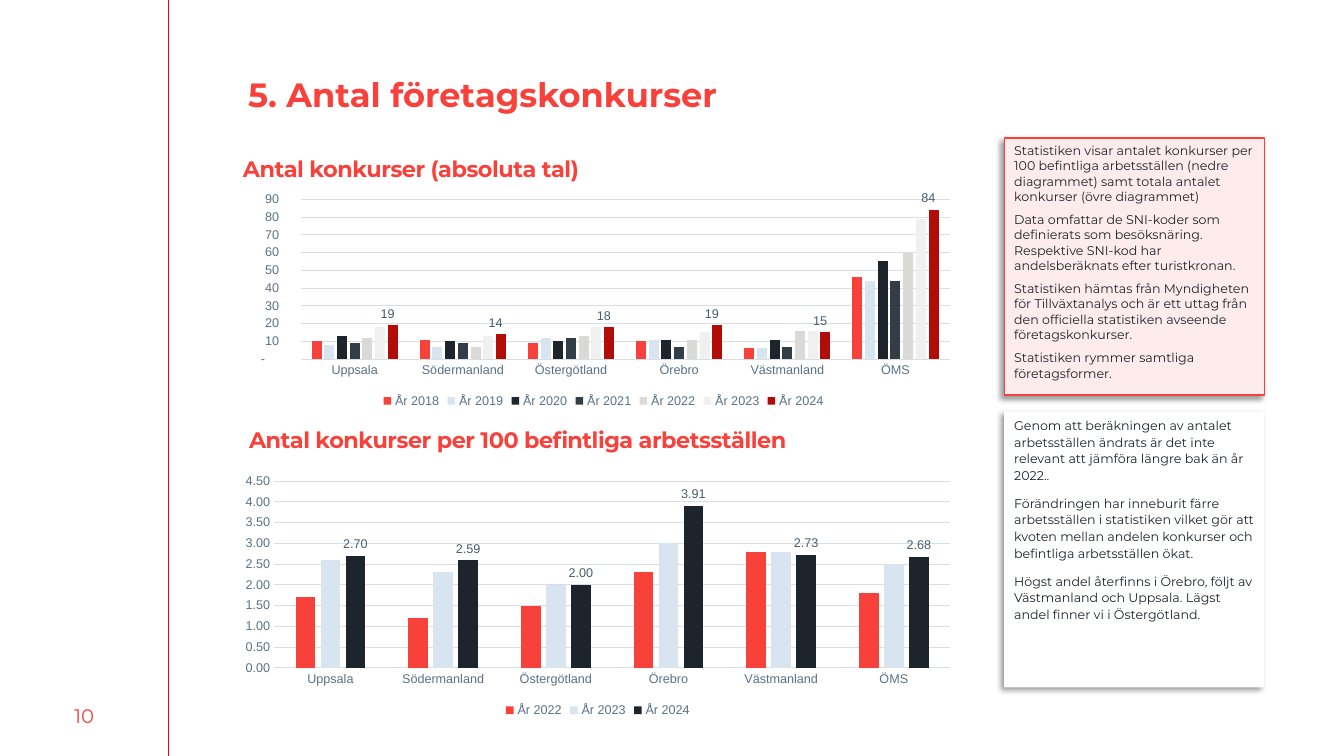
import pptx
import pptx.chart.data
import pptx.dml.color
import pptx.enum.chart
import pptx.enum.shapes
import pptx.enum.text
import pptx.oxml
import pptx.oxml.ns
import pptx.util

COLORS = {
    "red": "F8413A", "accent": "F7413A", "rule": "FF0000", "pink": "FEECEC",
    "white": "FFFFFF", "ink": "1D242B", "axis": "5B7187", "label": "495B6C",
    "grid": "D8DEE5", "pale_blue": "D8E5F0", "slate": "333D46",
    "stone": "D9D9D6", "mist": "F0F0F0", "dark_red": "B10D06",
}
REGIONS = ["Uppsala", "Södermanland", "Östergötland", "Örebro", "Västmanland", "ÖMS"]
COUNT_FORMAT = r'_-* #\ ##0\ _k_r_-;\-* #\ ##0\ _k_r_-;_-* "-"??\ _k_r_-;_-@_-'
COUNT_SERIES = [
    ("År 2018", "red", [10, 11, 9, 10, 6, 46]),
    ("År 2019", "pale_blue", [8, 7, 12, 11, 6, 44]),
    ("År 2020", "ink", [13, 10, 10, 11, 11, 55]),
    ("År 2021", "slate", [9, 9, 12, 7, 7, 44]),
    ("År 2022", "stone", [12, 7, 13, 11, 16, 60]),
    ("År 2023", "mist", [18, 13, 18, 15, 16, 79]),
    ("År 2024", "dark_red", [19, 14, 18, 19, 15, 84]),
]
RATE_SERIES = [
    ("År 2022", "red", [1.7, 1.2, 1.5, 2.3, 2.8, 1.8]),
    ("År 2023", "pale_blue", [2.6, 2.3, 2, 3, 2.8, 2.5]),
    ("År 2024", "ink", [2.7, 2.59, 2, 3.91, 2.73, 2.68]),
]
METHOD_NOTES = [
    "Statistiken visar antalet konkurser per 100 befintliga arbetsställen (nedre diagrammet) samt totala antalet konkurser (övre diagrammet)",
    "Data omfattar de SNI-koder som definierats som besöksnäring. Respektive SNI-kod har andelsberäknats efter turistkronan.",
    "Statistiken hämtas från Myndigheten för Tillväxtanalys och är ett uttag från den officiella statistiken avseende företagskonkurser.",
    "Statistiken rymmer samtliga företagsformer.",
]
RESULT_NOTES = [
    "Genom att beräkningen av antalet arbetsställen ändrats är det inte relevant att jämföra längre bak än år 2022..",
    "Förändringen har inneburit färre arbetsställen i statistiken vilket gör att kvoten mellan andelen konkurser och befintliga arbetsställen ökat.",
    "Högst andel återfinns i Örebro, följt av Västmanland och Uppsala. Lägst andel finner vi i Östergötland.",
]


def rgb(name):
    return pptx.dml.color.RGBColor.from_string(COLORS[name])


def part(box, left, top, width, height):
    x, y, w, h = box
    return (int(x + w * left / 100), int(y + h * top / 100),
            int(w * width / 100), int(h * height / 100))


def style_font(font, size, color, bold=False, name="Montserrat"):
    font.name = name
    font.size = pptx.util.Pt(size)
    font.bold = bold
    font.color.rgb = rgb(color)


def set_effects(shape, content=""):
    namespace = pptx.oxml.ns.nsdecls("a")
    shape._element.spPr.append(
        pptx.oxml.parse_xml(f"<a:effectLst {namespace}>{content}</a:effectLst>"))


def add_text(slide, box, text, size, color, bold=False, inset=0.0, spacing=0):
    shape = slide.shapes.add_textbox(*box)
    frame = shape.text_frame
    frame.word_wrap = True
    frame.margin_left = frame.margin_right = pptx.util.Inches(inset)
    frame.margin_top = frame.margin_bottom = pptx.util.Inches(0.05)
    frame.text = text
    run = frame.paragraphs[0].runs[0]
    style_font(run.font, size, color, bold)
    if spacing:
        run._r.get_or_add_rPr().set("spc", str(spacing))
    return frame


def add_rail(slide, box, number):
    left, top, width, height = box
    frame = add_text(slide, part(box, 0, 92, 100, 5.33), number, 14, "accent")
    frame.vertical_anchor = pptx.enum.text.MSO_ANCHOR.MIDDLE
    frame.paragraphs[0].alignment = pptx.enum.text.PP_ALIGN.CENTER
    rule = slide.shapes.add_connector(
        pptx.enum.shapes.MSO_CONNECTOR.STRAIGHT,
        left + width, top, left + width, top + height)
    rule.line.color.rgb = rgb("rule")
    rule.line.width = pptx.util.Pt(0.75)
    set_effects(rule)


def add_panel(slide, box, notes, fill, outline, line_spacing, gap):
    panel = slide.shapes.add_shape(pptx.enum.shapes.MSO_SHAPE.RECTANGLE, *box)
    panel.fill.solid()
    panel.fill.fore_color.rgb = rgb(fill)
    if outline:
        panel.line.color.rgb = rgb(outline)
        panel.line.width = pptx.util.Pt(1)
    else:
        panel.line.fill.background()
    set_effects(panel, '<a:outerShdw blurRad="50800" dist="38100" dir="8100000" '
                'algn="tr" rotWithShape="0"><a:srgbClr val="000000">'
                '<a:alpha val="40000"/></a:srgbClr></a:outerShdw>')
    frame = panel.text_frame
    frame.word_wrap = True
    frame.vertical_anchor = pptx.enum.text.MSO_ANCHOR.TOP
    frame.text = "\n".join(notes)
    for index, paragraph in enumerate(frame.paragraphs):
        paragraph.alignment = pptx.enum.text.PP_ALIGN.LEFT
        paragraph.line_spacing = line_spacing
        paragraph.space_before = pptx.util.Pt(gap if index else 0)
        paragraph.space_after = pptx.util.Pt(gap)
        style_font(paragraph.runs[0].font, 9, "ink")


def style_axes(chart, maximum, step, number_format):
    category_axis, value_axis = chart.category_axis, chart.value_axis
    for axis in (category_axis, value_axis):
        axis.major_tick_mark = pptx.enum.chart.XL_TICK_MARK.NONE
        axis.minor_tick_mark = pptx.enum.chart.XL_TICK_MARK.NONE
        style_font(axis.tick_labels.font, 9, "axis", name="Arial")
    value_axis.has_major_gridlines = True
    for line in (category_axis.format.line, value_axis.major_gridlines.format.line):
        line.color.rgb = rgb("grid")
        line.width = pptx.util.Pt(0.75)
    value_axis.format.line.fill.background()
    value_axis.minimum_scale = 0
    value_axis.maximum_scale = maximum
    value_axis.major_unit = step
    value_axis.tick_labels.number_format = number_format
    value_axis.tick_labels.number_format_is_linked = False


def add_chart_block(slide, box, heading, indent, offset, rows, maximum, step, number_format):
    add_text(slide, part(box, indent, 0, 100 - indent, 13), heading,
             16, "accent", bold=True, spacing=-30)
    data = pptx.chart.data.CategoryChartData(number_format=number_format)
    data.categories = REGIONS
    for name, color, values in rows:
        data.add_series(name, values)
    chart = slide.shapes.add_chart(
        pptx.enum.chart.XL_CHART_TYPE.COLUMN_CLUSTERED,
        *part(box, 0, offset, 100, 100 - offset), data).chart
    style_font(chart.font, 10, "ink", name="Arial")
    chart.has_title = False
    chart.has_legend = True
    chart.legend.position = pptx.enum.chart.XL_LEGEND_POSITION.BOTTOM
    chart.legend.include_in_layout = False
    style_font(chart.legend.font, 9, "axis", name="Arial")
    style_axes(chart, maximum, step, number_format)
    plot = chart.plots[0]
    plot.gap_width = 219
    plot.overlap = -27
    plot.vary_by_categories = False
    for series, (name, color, values) in zip(plot.series, rows):
        series.format.fill.solid()
        series.format.fill.fore_color.rgb = rgb(color)
        series.invert_if_negative = False
    labels = plot.series[len(rows) - 1].data_labels
    labels.show_value = True
    labels.position = pptx.enum.chart.XL_LABEL_POSITION.OUTSIDE_END
    labels.number_format = number_format
    labels.number_format_is_linked = False
    style_font(labels.font, 9, "label", name="Arial")


def main():
    presentation = pptx.Presentation()
    presentation.slide_width = pptx.util.Inches(13.33)
    presentation.slide_height = pptx.util.Inches(7.5)
    slide = presentation.slides.add_slide(presentation.slide_layouts[6])
    page = (0, 0, presentation.slide_width, presentation.slide_height)
    add_rail(slide, part(page, 0, 0, 12.53, 100), "10")
    add_text(slide, part(page, 18.08, 9.07, 75.92, 11.87),
             "5. Antal företagskonkurser", 24, "red", bold=True, inset=0.05)
    add_panel(slide, part(page, 74.72, 18.27, 19.35, 34),
              METHOD_NOTES, "pink", "accent", 1.0, 3)
    add_panel(slide, part(page, 74.72, 54.4, 19.35, 36.53),
              RESULT_NOTES, "white", None, 1.1, 4)
    add_chart_block(slide, part(page, 18.08, 19.87, 53.64, 34.67),
                    "Antal konkurser (absoluta tal)", 0, 14.23,
                    COUNT_SERIES, 90, 10, COUNT_FORMAT)
    add_chart_block(slide, part(page, 17.18, 55.73, 54.61, 39.73),
                    "Antal konkurser per 100 befintliga arbetsställen", 2.47, 15.77,
                    RATE_SERIES, 4.5, 0.5, "0.00")
    presentation.save("out.pptx")


if __name__ == "__main__":
    main()
